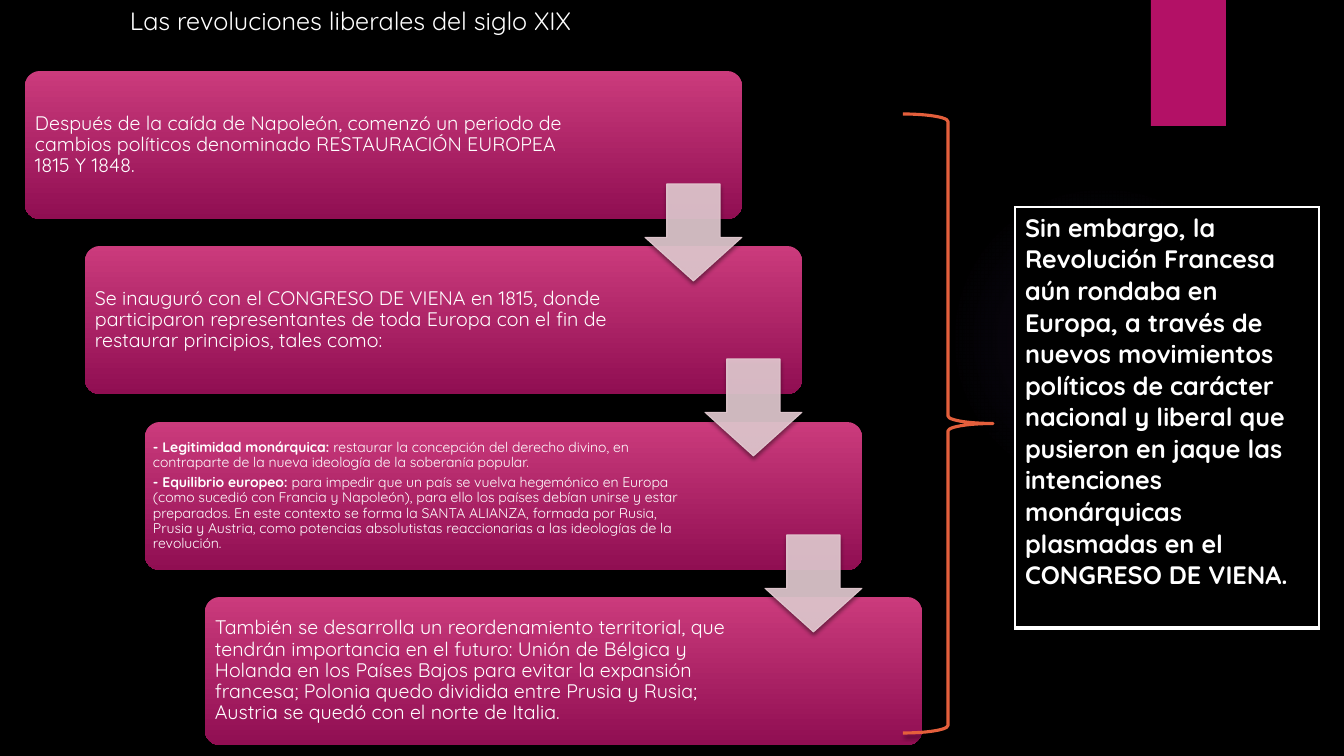
from lxml import etree
from pptx import Presentation
from pptx import util as u
from pptx.dml.color import RGBColor
from pptx.enum import shapes, text
from pptx.oxml import parse_xml
from pptx.oxml.ns import nsdecls, qn

BLACK = RGBColor(0x00, 0x00, 0x00)
WHITE = RGBColor(0xFF, 0xFF, 0xFF)
MAGENTA = RGBColor(0xB3, 0x11, 0x66)
PINK = RGBColor(0xCB, 0x3B, 0x7C)
WINE = RGBColor(0x90, 0x0E, 0x52)
ROSE = RGBColor(0xE5, 0xCC, 0xD3)
ORANGE = RGBColor(0xE4, 0x5F, 0x3C)
VIOLET = RGBColor(0x9B, 0x6B, 0xF2)

EMU_PER_PX = 914400 / 100.8
SOFT_SHADOW = (45, 3, 2)
DEEP_SHADOW = (60, 5, 3)
DOWNWARD = '<a:lin ang="5400000" scaled="0"/>'
RADIAL = ('<a:path path="circle"><a:fillToRect l="50000" t="50000" '
          'r="50000" b="50000"/></a:path>')

# Each step: text width, font size, paragraphs of (bold lead, body)
STEPS = [
    (544, 14, [("", "Después de la caída de Napoleón, comenzó un periodo de cambios "
                    "políticos denominado RESTAURACIÓN EUROPEA 1815 Y 1848.")]),
    (551, 14, [("", "Se inauguró con el CONGRESO DE VIENA en 1815, donde participaron "
                    "representantes de toda Europa con el fin de restaurar principios, "
                    "tales como:")]),
    (552, 10, [
        ("- Legitimidad monárquica: ",
         "restaurar la concepción del derecho divino, en contraparte de la nueva "
         "ideología de la soberanía popular."),
        ("- Equilibrio europeo: ",
         "para impedir que un país se vuelva hegemónico en Europa (como sucedió con "
         "Francia y Napoleón), para ello los países debían unirse y estar preparados. "
         "En este contexto se forma la SANTA ALIANZA, formada por Rusia, Prusia y "
         "Austria, como potencias absolutistas reaccionarias a las ideologías de la "
         "revolución.")]),
    (551, 14, [("", "También se desarrolla un reordenamiento territorial, que tendrán "
                    "importancia en el futuro: Unión de Bélgica y Holanda en los Países "
                    "Bajos para evitar la expansión francesa; Polonia quedo dividida "
                    "entre Prusia y Rusia; Austria se quedó con el norte de Italia.")]),
]
CONCLUSION = ("Sin embargo, la Revolución Francesa aún rondaba en Europa, a través de "
              "nuevos movimientos políticos de carácter nacional y liberal que pusieron "
              "en jaque las intenciones monárquicas plasmadas en el CONGRESO DE VIENA.")


def px(length):
    return u.Emu(round(length * EMU_PER_PX))


def make_translucent(fill_format_parent, percent):
    """Apply an opacity to every solid colour below an XML element."""
    for color in fill_format_parent.iter(qn("a:srgbClr")):
        etree.SubElement(color, qn("a:alpha")).set("val", str(percent * 1000))


class SlideBuilder:
    font_name = "Quicksand"
    font_color = WHITE

    def __init__(self, slide, background):
        self.slide = slide
        slide.background.fill.solid()
        slide.background.fill.fore_color.rgb = background

    def shape(self, kind, box, fill=None, line=None, line_width=0.75,
              adjustments=(), opacity=None, shadow=None):
        shape = self.slide.shapes.add_shape(kind, *map(px, box))
        for index, value in enumerate(adjustments):
            shape.adjustments[index] = value
        if fill is None:
            shape.fill.background()
        else:
            shape.fill.solid()
            shape.fill.fore_color.rgb = fill
        if line is None:
            shape.line.fill.background()
        else:
            shape.line.color.rgb = line
            shape.line.width = u.Pt(line_width)
        if opacity is not None:
            make_translucent(shape.element.spPr, opacity)
        shape.shadow.inherit = False
        if shadow:
            self.drop_shadow(shape, *shadow)
        return shape

    def drop_shadow(self, shape, opacity, blur, distance):
        effects = shape.element.spPr.find(qn("a:effectLst"))
        effects.append(parse_xml(
            f'<a:outerShdw {nsdecls("a")} blurRad="{u.Pt(blur)}" dist="{u.Pt(distance)}" '
            f'dir="5400000" rotWithShape="0"><a:srgbClr val="{BLACK}">'
            f'<a:alpha val="{opacity * 1000}"/></a:srgbClr></a:outerShdw>'))

    def gradient_shape(self, kind, box, stops, direction, **style):
        """Stops are (position %, colour, opacity %)."""
        shape = self.shape(kind, box, **style)
        stop_xml = "".join(
            f'<a:gs pos="{pos * 1000}"><a:srgbClr val="{color}">'
            f'<a:alpha val="{opacity * 1000}"/></a:srgbClr></a:gs>'
            for pos, color, opacity in stops)
        properties = shape.element.spPr
        properties.replace(properties.find(qn("a:noFill")), parse_xml(
            f'<a:gradFill {nsdecls("a")} rotWithShape="1"><a:gsLst>{stop_xml}</a:gsLst>'
            f'{direction}</a:gradFill>'))
        return shape

    def style_font(self, paragraph, size, bold=None):
        font = paragraph.font
        font.name, font.size, font.bold = self.font_name, u.Pt(size), bold
        font.color.rgb = self.font_color

    def text(self, box, paragraphs, size, inset=None, middle=False, line_spacing=None):
        frame = self.slide.shapes.add_textbox(*map(px, box)).text_frame
        frame.word_wrap = True
        if middle:
            frame.vertical_anchor = text.MSO_ANCHOR.MIDDLE
        if inset is not None:
            frame.margin_left = frame.margin_right = px(inset)
            frame.margin_top = frame.margin_bottom = px(inset)
        for index, (lead, body) in enumerate(paragraphs):
            paragraph = frame.add_paragraph() if index else frame.paragraphs[0]
            if line_spacing:
                paragraph.line_spacing = line_spacing
                paragraph.space_after = u.Pt(size * 0.35)
            self.style_font(paragraph, size)
            if lead:
                run = paragraph.add_run()
                run.text, run.font.bold = lead, True
            paragraph.add_run().text = body
        return frame

    def framed_cell(self, box, content, size):
        """One-cell table with a heavier bottom border."""
        table = self.slide.shapes.add_table(1, 1, *map(px, box)).table
        table.first_row = table.horz_banding = False
        cell = table.cell(0, 0)
        cell.text = content
        self.style_font(cell.text_frame.paragraphs[0], size, bold=True)
        cell.fill.solid()
        cell.fill.fore_color.rgb = BLACK
        properties = cell._tc.get_or_add_tcPr()
        for index, (side, width) in enumerate(
                [("lnL", 1), ("lnR", 1), ("lnT", 1), ("lnB", 3)]):
            properties.insert(index, parse_xml(
                f'<a:{side} {nsdecls("a")} w="{u.Pt(width)}"><a:solidFill>'
                f'<a:srgbClr val="{WHITE}"/></a:solidFill></a:{side}>'))


def main():
    presentation = Presentation()
    presentation.slide_width, presentation.slide_height = px(1344), px(756)
    slide = presentation.slides.add_slide(presentation.slide_layouts[6])
    builder = SlideBuilder(slide, BLACK)
    preset = shapes.MSO_SHAPE

    builder.gradient_shape(preset.OVAL, (949, 184, 310, 310),
                           [(0, VIOLET, 7), (36, VIOLET, 6), (69, VIOLET, 0)], RADIAL)
    builder.shape(preset.RECTANGLE, (1151, 0, 75, 126), MAGENTA, shadow=SOFT_SHADOW)

    offsets = [(60 * i, 351 * i // 2) for i in range(len(STEPS))]
    for (dx, dy), (width, size, paragraphs) in zip(offsets, STEPS):
        left, top = 25 + dx, 71 + dy
        builder.gradient_shape(preset.ROUNDED_RECTANGLE, (left, top, 717, 148),
                               [(0, PINK, 100), (100, WINE, 100)], DOWNWARD,
                               adjustments=[0.1], shadow=DEEP_SHADOW)
        builder.text((left + 4, top + 4, width, 140), paragraphs, size,
                     inset=6 if size > 10 else 4, middle=True, line_spacing=0.9)
    for dx, dy in offsets[:-1]:
        builder.shape(preset.DOWN_ARROW, (645 + dx, 184 + dy, 97, 97), ROSE, line=ROSE,
                      adjustments=[0.55, 0.45], opacity=90, shadow=SOFT_SHADOW)

    builder.shape(preset.RIGHT_BRACE, (903, 114, 90, 619), line=ORANGE, line_width=2.25,
                  shadow=SOFT_SHADOW)
    builder.framed_cell((1015, 207, 304, 421), CONCLUSION, 18)
    title = builder.text((120, 0, 1085, 40),
                         [("", "Las revoluciones liberales del siglo XIX")], 18)
    title.auto_size = text.MSO_AUTO_SIZE.SHAPE_TO_FIT_TEXT
    presentation.save("out.pptx")


if __name__ == "__main__":
    main()
